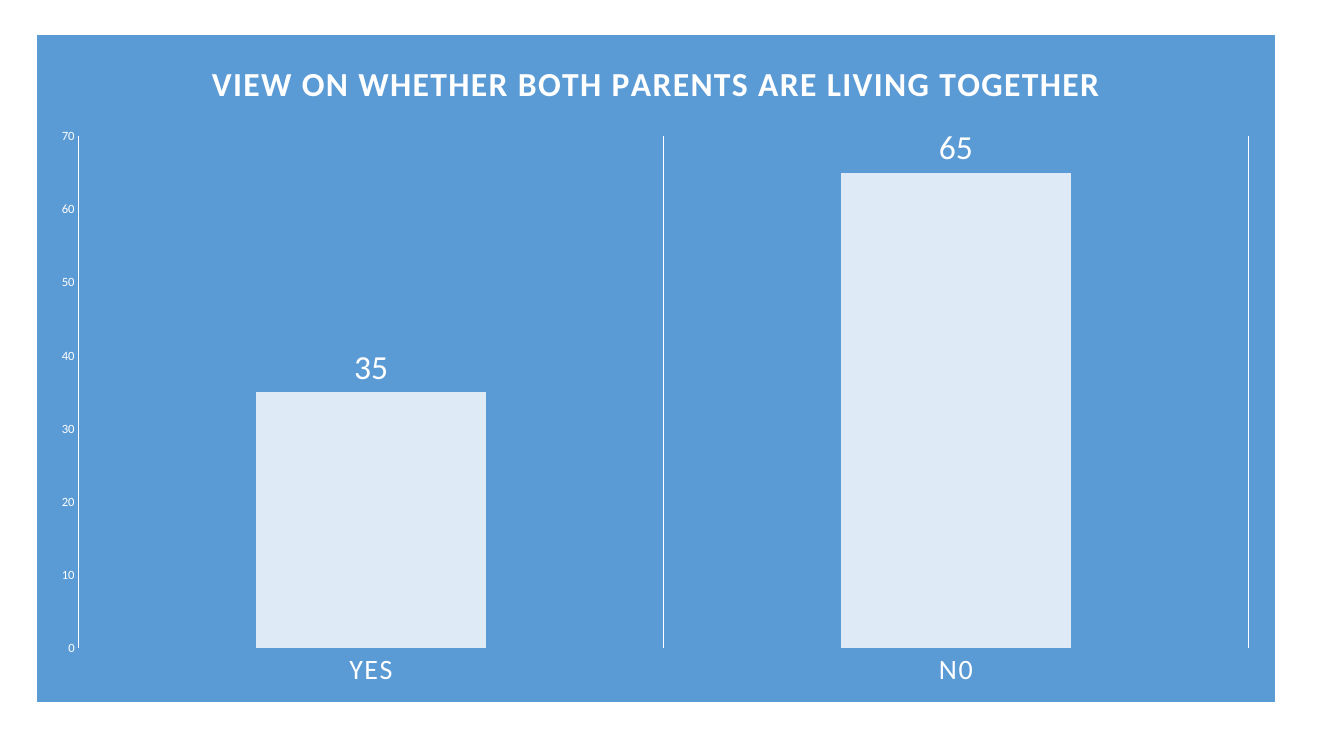
import dataclasses

import lxml.etree
import pptx
import pptx.chart.data
import pptx.dml.color
import pptx.enum.chart
import pptx.oxml
import pptx.oxml.ns
import pptx.util


@dataclasses.dataclass(frozen=True)
class Theme:
    font: str = "Calibri"
    panel: str = "5B9BD5"
    bar: str = "DEEBF7"
    light: str = "FFFFFF"
    title_size: float = 24
    label_size: float = 24
    category_size: float = 20
    value_size: float = 9
    line_width: float = 0.75
    letter_spacing: int = 100  # hundredths of a point


@dataclasses.dataclass(frozen=True)
class Answer:
    name: str
    count: int


@dataclasses.dataclass(frozen=True)
class Frame:
    left: float
    top: float
    width: float
    height: float


THEME = Theme()
TITLE = "VIEW ON WHETHER BOTH PARENTS ARE LIVING TOGETHER"
ANSWERS = [Answer("YES", 35), Answer("N0", 65)]
CHART_FRAME = Frame(0.94, 0.89, 31.19, 16.81)  # centimetres
PLOT_FRAME = Frame(0.033, 0.151, 0.946, 0.769)  # shares of the chart


def format_font(font, size: float, bold: bool = False, spacing: int = 0) -> None:
    font.name = THEME.font
    font.size = pptx.util.Pt(size)
    font.bold = bold
    font.color.rgb = pptx.dml.color.RGBColor.from_string(THEME.light)
    if spacing:
        font._element.set("spc", str(spacing))


def fill_panel(chart) -> None:
    """Colour the chart background and its border."""
    namespaces = pptx.oxml.ns.nsdecls("c", "a")
    fill = f'<a:solidFill><a:srgbClr val="{THEME.panel}"/></a:solidFill>'
    width = pptx.util.Pt(THEME.line_width)
    panel = pptx.oxml.parse_xml(
        f'<c:spPr {namespaces}>{fill}<a:ln w="{width}">{fill}</a:ln></c:spPr>'
    )
    chart._chartSpace.find(pptx.oxml.ns.qn("c:chart")).addnext(panel)


def place_plot(chart, frame: Frame) -> None:
    """Fix the inner plot area inside the chart."""
    qn = pptx.oxml.ns.qn
    area = chart._chartSpace.find(".//" + qn("c:plotArea"))
    for previous in area.findall(qn("c:layout")):
        area.remove(previous)
    layout = lxml.etree.Element(qn("c:layout"))
    manual = lxml.etree.SubElement(layout, qn("c:manualLayout"))
    settings = {
        "layoutTarget": "inner", "xMode": "edge", "yMode": "edge",
        "x": frame.left, "y": frame.top, "w": frame.width, "h": frame.height,
    }
    for name, value in settings.items():
        lxml.etree.SubElement(manual, qn(f"c:{name}")).set("val", str(value))
    area.insert(0, layout)


def format_axis(axis, size: float, gridlines: bool, spacing: int = 0) -> None:
    axis.major_tick_mark = pptx.enum.chart.XL_TICK_MARK.NONE
    axis.minor_tick_mark = pptx.enum.chart.XL_TICK_MARK.NONE
    axis.format.line.fill.background()
    axis.has_major_gridlines = gridlines
    if gridlines:
        line = axis.major_gridlines.format.line
        line.color.rgb = pptx.dml.color.RGBColor.from_string(THEME.light)
        line.width = pptx.util.Pt(THEME.line_width)
    format_font(axis.tick_labels.font, size, spacing=spacing)


def format_bars(plot) -> None:
    plot.gap_width = 154
    plot.vary_by_categories = False
    series = plot.series[0]
    series.format.fill.solid()
    series.format.fill.fore_color.rgb = pptx.dml.color.RGBColor.from_string(THEME.bar)
    labels = series.data_labels
    labels.show_value = True
    labels.position = pptx.enum.chart.XL_LABEL_POSITION.OUTSIDE_END
    format_font(labels.font, THEME.label_size)


def add_answer_chart(page, answers: list[Answer], frame: Frame):
    data = pptx.chart.data.CategoryChartData()
    data.categories = [answer.name for answer in answers]
    data.add_series("Series 1", [answer.count for answer in answers])
    box = [pptx.util.Cm(length) for length in dataclasses.astuple(frame)]
    kind = pptx.enum.chart.XL_CHART_TYPE.COLUMN_CLUSTERED
    return page.shapes.add_chart(kind, *box, data).chart


def add_title(chart, text: str) -> None:
    chart.has_title = True
    chart.chart_title.include_in_layout = False
    span = chart.chart_title.text_frame.paragraphs[0].add_run()
    span.text = text
    format_font(span.font, THEME.title_size, bold=True, spacing=THEME.letter_spacing)


def main() -> None:
    deck = pptx.Presentation()
    deck.slide_width = pptx.util.Cm(33.87)
    deck.slide_height = pptx.util.Cm(19.05)
    page = deck.slides.add_slide(deck.slide_layouts[6])

    chart = add_answer_chart(page, ANSWERS, CHART_FRAME)
    chart.has_legend = False
    chart.font.name = THEME.font
    add_title(chart, TITLE)
    fill_panel(chart)
    place_plot(chart, PLOT_FRAME)
    format_axis(chart.category_axis, THEME.category_size, gridlines=True,
                spacing=THEME.letter_spacing)
    format_axis(chart.value_axis, THEME.value_size, gridlines=False)
    chart.value_axis.minimum_scale = 0
    chart.value_axis.maximum_scale = 70
    chart.value_axis.major_unit = 10
    format_bars(chart.plots[0])

    deck.save("out.pptx")


if __name__ == "__main__":
    main()
